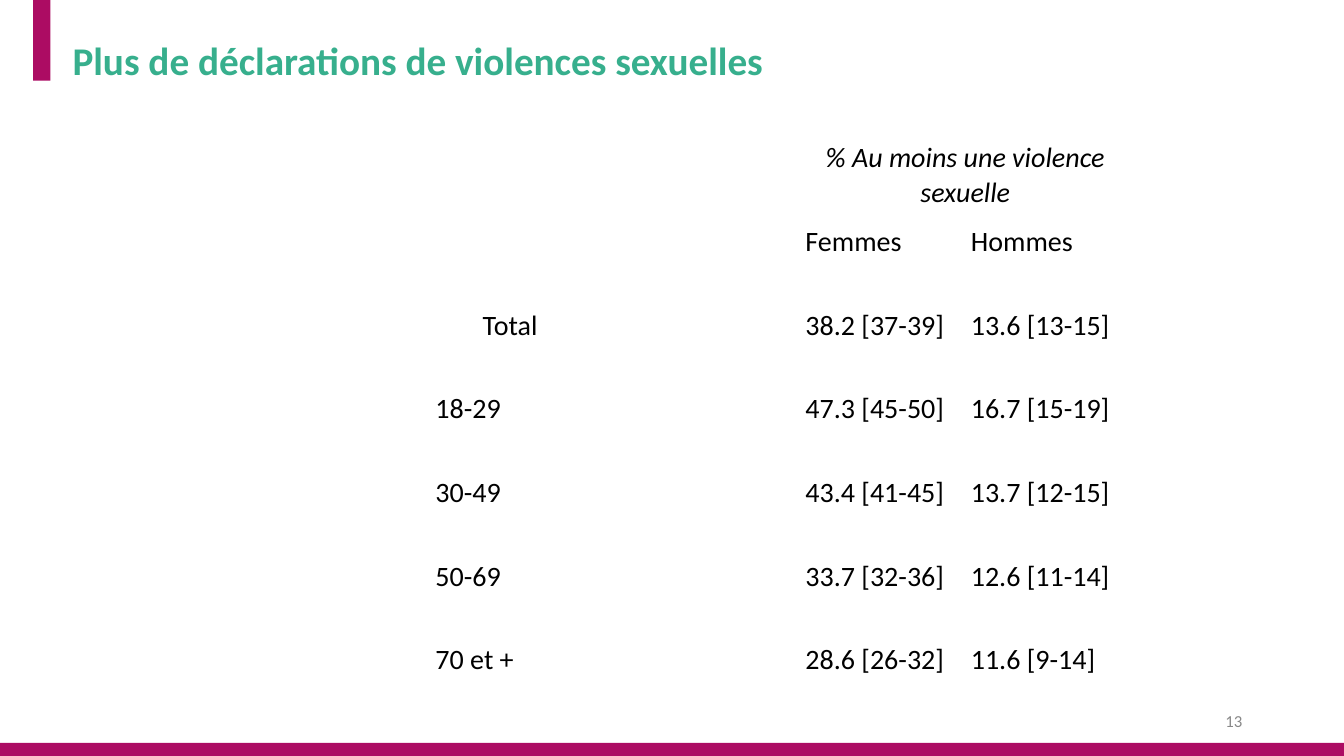
from pptx import Presentation
from pptx.dml.color import RGBColor
from pptx.enum import shapes, text
from pptx.util import Inches, Pt

MAGENTA = "AC0C63"
ALIGN = text.PP_ALIGN


def color(value):
    return RGBColor.from_string(value)


def write(frame, words, align, size, ink, inset, **styles):
    """Fill a text frame or table cell with one formatted paragraph."""
    for side, length in zip(("left", "top", "right", "bottom"), inset):
        setattr(frame, f"margin_{side}", Inches(length))
    para = getattr(frame, "text_frame", frame).paragraphs[0]
    para.alignment = align
    span = para.add_run()
    span.text = words
    span.font.color.rgb = color(ink)
    for name, value in {"name": "Calibri", "size": Pt(size), **styles}.items():
        setattr(span.font, name, value)
    return para


deck = Presentation()
deck.slide_width, deck.slide_height = Inches(13.33), Inches(7.5)
page = deck.slides.add_slide(deck.slide_layouts[6])

# Magenta bars
for area in ((0.33, 0, 0.17, 0.8), (0, 7.37, 13.33, 0.13)):
    bar = page.shapes.add_shape(shapes.MSO_SHAPE.RECTANGLE, *map(Inches, area))
    bar.shadow.inherit = False
    bar.fill.solid()
    bar.fill.fore_color.rgb = color(MAGENTA)
    bar.line.fill.background()

# Page number
number = page.shapes.add_textbox(*map(Inches, (9.42, 6.95, 3, 0.4))).text_frame
number.word_wrap = True
number.vertical_anchor = text.MSO_ANCHOR.MIDDLE
write(number, "13", ALIGN.RIGHT, 12, "888888", (0.1, 0.05, 0.1, 0.05))

# Title
title = page.shapes.add_textbox(*map(Inches, (0.5, 0.36, 11.21, 1.03))).text_frame
title.word_wrap = True
heading = write(title, "Plus de déclarations de violences sexuelles", ALIGN.LEFT,
                28, "37AF8D", (0.22, 0.13, 0.13, 0.13), bold=True)
heading.line_spacing = 0.7

# Table of rates by age and sex
rows = [
    ("", "", "% Au moins une violence sexuelle", ""),
    ("", "", "Femmes", "Hommes"),
    ("Total", "", "38.2 [37-39]", "13.6 [13-15]"),
    ("", "18-29", "47.3 [45-50]", "16.7 [15-19]"),
    ("", "30-49", "43.4 [41-45]", "13.7 [12-15]"),
    ("", "50-69", "33.7 [32-36]", "12.6 [11-14]"),
    ("", "70 et +", "28.6 [26-32]", "11.6 [9-14]"),
]
widths = (2.05, 3.67, 1.64, 1.67)
table = page.shapes.add_table(len(rows), len(widths),
                              *map(Inches, (2.2, 1.33, 9.03, 5.81))).table
table.first_row = table.horz_banding = False
for column, width in zip(table.columns, widths):
    column.width = Inches(width)
for row in table.rows:
    row.height = Inches(0.83)
table.cell(0, 2).merge(table.cell(0, 3))
table.cell(2, 0).merge(table.cell(2, 1))

for r, values in enumerate(rows):
    for c, value in enumerate(values):
        cell = table.cell(r, c)
        cell.fill.background()
        if value:
            align = ALIGN.CENTER if cell.is_merge_origin else ALIGN.JUSTIFY
            para = write(cell, value, align, 20, "000000", [0.07] * 4, italic=r == 0)
            para.space_after = Pt(3)

deck.save("out.pptx")
